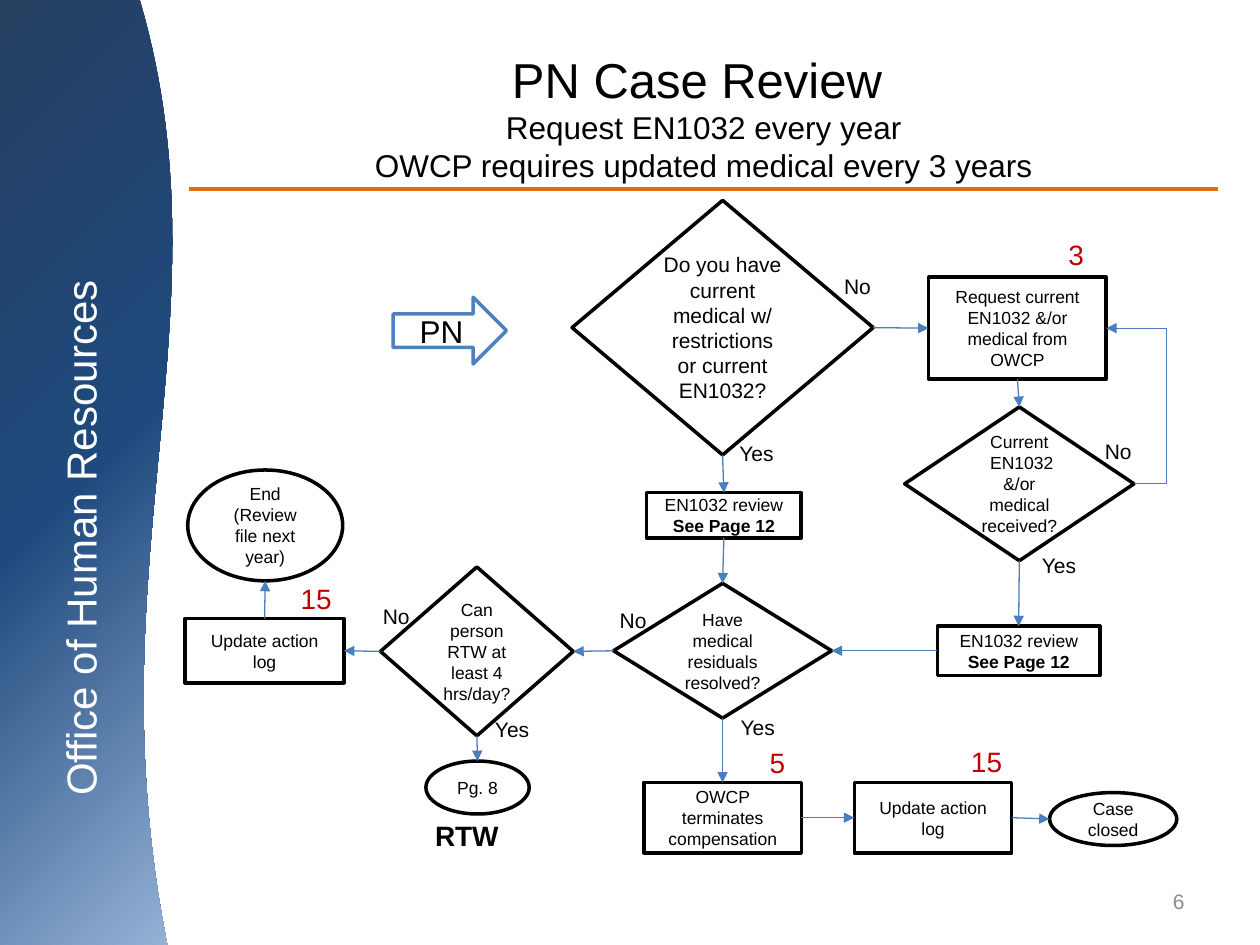
from dataclasses import dataclass
from typing import Any

from lxml.etree import SubElement
from pptx import Presentation
from pptx.dml.color import RGBColor
from pptx.enum.shapes import MSO_CONNECTOR, MSO_SHAPE
from pptx.enum.text import MSO_ANCHOR, MSO_AUTO_SIZE, PP_ALIGN
from pptx.oxml.ns import qn
from pptx.util import Inches, Pt

COLORS = {
    "ink": "000000", "paper": "FFFFFF", "mark": "C00000", "rule": "E46C0A",
    "arrow": "4F81BD", "link": "4B7EBC", "page": "8C8C8C",
    "deep": "254061", "navy": "1F497D", "pale": "95B3D7",
}
RECT, OVAL = MSO_SHAPE.RECTANGLE, MSO_SHAPE.OVAL
ASK, ARROW = MSO_SHAPE.FLOWCHART_DECISION, MSO_SHAPE.RIGHT_ARROW
TOP, LEFT, BOTTOM, RIGHT = range(4)
Box = tuple[float, float, float, float]


@dataclass
class Node:
    name: str
    kind: Any
    box: Box
    text: str
    size: int = 10
    line: str = "ink"


@dataclass
class Link:
    start: str
    side: int
    end: str
    into: int
    bend: float | None = None


@dataclass
class Label:
    text: str
    box: Box
    size: int = 12
    color: str = "ink"
    bold: bool = False
    align: Any = PP_ALIGN.CENTER
    anchor: Any = MSO_ANCHOR.TOP
    wrap: bool = True
    turn: int = 0


def answer(text: str, x: float, y: float) -> Label:
    width = 0.42 if text == "No" else 0.48
    return Label(text, (x, y, width, 0.3), align=PP_ALIGN.LEFT, wrap=False)


def count(text: str, x: float, y: float) -> Label:
    return Label(text, (x, y, 0.5, 0.37), 16, "mark")


REVIEW = "EN1032 review\n*See Page 12"
NODES = [
    Node("pn", ARROW, (3.12, 2.36, 0.9, 0.53), "PN", 18, "arrow"),
    Node("current", ASK, (4.54, 1.59, 2.39, 2.02),
         "Do you have current medical w/ restrictions or current EN1032?", 12),
    Node("request", RECT, (7.37, 2.2, 1.41, 0.81),
         "Request current EN1032 &/or medical from OWCP"),
    Node("review", RECT, (5.13, 3.91, 1.23, 0.36), REVIEW),
    Node("solved", ASK, (4.87, 4.63, 1.73, 1.07), "Have medical residuals resolved?"),
    Node("stop", RECT, (5.11, 6.21, 1.25, 0.56), "OWCP terminates compensation"),
    Node("got", ASK, (7.18, 3.23, 1.82, 1.22),
         "Current\n EN1032 &/or medical received?"),
    Node("check", RECT, (7.44, 4.97, 1.29, 0.39), REVIEW),
    Node("log", RECT, (6.78, 6.21, 1.25, 0.56), "Update action log"),
    Node("end", OVAL, (1.49, 3.73, 1.23, 0.88), "End (Review file next year)"),
    Node("closed", OVAL, (8.33, 6.29, 1.01, 0.42), "Case closed"),
    Node("able", ASK, (3.02, 4.5, 1.53, 1.34), "Can person RTW at least 4 hrs/day?"),
    Node("work", OVAL, (3.38, 6.04, 0.82, 0.42), "Pg. 8"),
    Node("update", RECT, (1.47, 4.91, 1.26, 0.51), "Update action log"),
]
LINKS = [
    Link("current", RIGHT, "request", LEFT),
    Link("current", BOTTOM, "review", TOP),
    Link("request", BOTTOM, "got", TOP),
    Link("got", RIGHT, "request", RIGHT, -1.18),
    Link("got", BOTTOM, "check", TOP),
    Link("check", LEFT, "solved", RIGHT),
    Link("review", BOTTOM, "solved", TOP),
    Link("solved", BOTTOM, "stop", TOP),
    Link("solved", LEFT, "able", RIGHT),
    Link("stop", RIGHT, "log", LEFT),
    Link("log", RIGHT, "closed", LEFT),
    Link("able", BOTTOM, "work", TOP),
    Link("able", LEFT, "update", RIGHT),
    Link("update", TOP, "end", BOTTOM),
]
LABELS = [
    Label("Office of Human Resources", (-2.07, 3.99, 5.47, 0.56), 24, "paper", turn=270),
    Label("6", (7.17, 6.95, 2.33, 0.4), 12, "page",
          align=PP_ALIGN.RIGHT, anchor=MSO_ANCHOR.MIDDLE),
    Label("RTW", (3.06, 6.45, 1.29, 0.37), 16, bold=True),
    answer("No", 6.6, 2.12), answer("Yes", 5.77, 3.45),
    answer("No", 8.67, 3.43), answer("Yes", 8.17, 4.34),
    answer("No", 4.82, 4.77), answer("Yes", 5.78, 5.62),
    answer("No", 2.94, 4.74), answer("Yes", 3.83, 5.64),
    count("3", 8.29, 1.84), count("15", 7.58, 5.86),
    count("5", 5.92, 5.87), count("15", 2.26, 4.57),
]


def shade(name: str) -> RGBColor:
    return RGBColor.from_string(COLORS[name])


def style(item: Any, values: dict[str, Any]) -> None:
    for key, value in values.items():
        setattr(item, key, value)


def add_run(para: Any, text: str, size: int, color: str = "ink", bold: bool = False) -> None:
    run = para.add_run()
    run.text = text
    style(run.font, {"name": "Arial", "size": Pt(size), "bold": bold})
    run.font.color.rgb = shade(color)


def draw_band(slide: Any) -> None:
    """Trace the side band along a cubic curve and fill it with three stops."""
    xs, ys = (1.11, 1.84, 0.72, 1.33), (0, 2.51, 4.46, 7.51)

    def curve(ends: tuple, t: float) -> float:
        a, b, c, d = ends
        u = 1 - t
        return a * u**3 + 3 * b * u * u * t + 3 * c * u * t * t + d * t**3

    edge = [(Inches(curve(xs, i / 60)), Inches(curve(ys, i / 60))) for i in range(61)]
    pen = slide.shapes.build_freeform(0, 0)
    pen.add_line_segments(edge + [(0, Inches(7.51))])
    band = pen.convert_to_shape()
    band.shadow.inherit = False
    band.line.fill.background()
    band.fill.gradient()
    band.fill.gradient_angle = 315
    stops = band._element.spPr.find(qn("a:gradFill")).find(qn("a:gsLst"))
    stops.clear()
    for place, name in ((0, "deep"), (50000, "navy"), (100000, "pale")):
        stop = SubElement(stops, qn("a:gs"), pos=str(place))
        SubElement(stop, qn("a:srgbClr"), val=COLORS[name])


def draw_title(slide: Any) -> None:
    frame = slide.shapes.add_textbox(*map(Inches, (1.5, 0.3, 8.17, 1.25))).text_frame
    style(frame, {"word_wrap": True, "vertical_anchor": MSO_ANCHOR.MIDDLE})
    para = frame.paragraphs[0]
    para.alignment = PP_ALIGN.CENTER
    add_run(para, "PN Case Review ", 28)
    for text in ("Request EN1032 every year", "OWCP requires updated medical every 3 years"):
        para.add_line_break()
        add_run(para, text, 18)


def draw_node(slide: Any, node: Node) -> Any:
    """Draw one step; a text line that starts with * is bold."""
    shape = slide.shapes.add_shape(node.kind, *map(Inches, node.box))
    shape.shadow.inherit = False
    shape.fill.solid()
    shape.fill.fore_color.rgb = shade("paper")
    shape.line.color.rgb = shade(node.line)
    shape.line.width = Pt(2)
    frame = shape.text_frame
    style(frame, {"word_wrap": True, "vertical_anchor": MSO_ANCHOR.MIDDLE})
    for i, text in enumerate(node.text.split("\n")):
        para = frame.add_paragraph() if i else frame.paragraphs[0]
        para.alignment = PP_ALIGN.CENTER
        add_run(para, text.lstrip("*"), node.size, bold=text.startswith("*"))
    return shape


def draw_line(slide: Any, kind: Any, ends: tuple, color: str, width: float) -> Any:
    line = slide.shapes.add_connector(kind, *ends)
    line.line.color.rgb = shade(color)
    line.line.width = Pt(width)
    SubElement(line._element.spPr, qn("a:effectLst"))
    return line


def find_site(shape: Any, side: int) -> tuple[int, int]:
    across, down = ((0.5, 0), (0, 0.5), (0.5, 1), (1, 0.5))[side]
    return (int(shape.left + across * shape.width), int(shape.top + down * shape.height))


def draw_link(slide: Any, link: Link, shapes: dict[str, Any]) -> None:
    start, end = shapes[link.start], shapes[link.end]
    kind = MSO_CONNECTOR.STRAIGHT if link.bend is None else MSO_CONNECTOR.ELBOW
    ends = find_site(start, link.side) + find_site(end, link.into)
    line = draw_line(slide, kind, ends, "link", 0.75)
    line.begin_connect(start, link.side)
    if end.auto_shape_type != OVAL or link.into == TOP:  # ovals number their sites otherwise
        line.end_connect(end, link.into)
    props = line._element.spPr
    SubElement(props.find(qn("a:ln")), qn("a:tailEnd"), type="triangle")
    if link.bend is not None:
        guides = props.find(qn("a:prstGeom")).find(qn("a:avLst"))
        SubElement(guides, qn("a:gd"), name="adj1", fmla=f"val {round(link.bend * 100000)}")


def draw_label(slide: Any, label: Label) -> None:
    box = slide.shapes.add_textbox(*map(Inches, label.box))
    box.rotation = label.turn
    frame = box.text_frame
    style(frame, {"word_wrap": label.wrap, "vertical_anchor": label.anchor,
                  "auto_size": MSO_AUTO_SIZE.NONE if label.turn
                  else MSO_AUTO_SIZE.SHAPE_TO_FIT_TEXT})
    para = frame.paragraphs[0]
    para.alignment = label.align
    add_run(para, label.text, label.size, label.color, label.bold)


def main() -> None:
    deck = Presentation()
    style(deck, {"slide_width": Inches(10), "slide_height": Inches(7.5)})
    slide = deck.slides.add_slide(deck.slide_layouts[6])
    draw_band(slide)
    rule = tuple(map(Inches, (1.5, 1.5, 9.67, 1.5)))
    draw_line(slide, MSO_CONNECTOR.STRAIGHT, rule, "rule", 2.25)
    draw_title(slide)
    shapes = {node.name: draw_node(slide, node) for node in NODES}
    for link in LINKS:
        draw_link(slide, link, shapes)
    for label in LABELS:
        draw_label(slide, label)
    deck.save("out.pptx")


if __name__ == "__main__":
    main()
